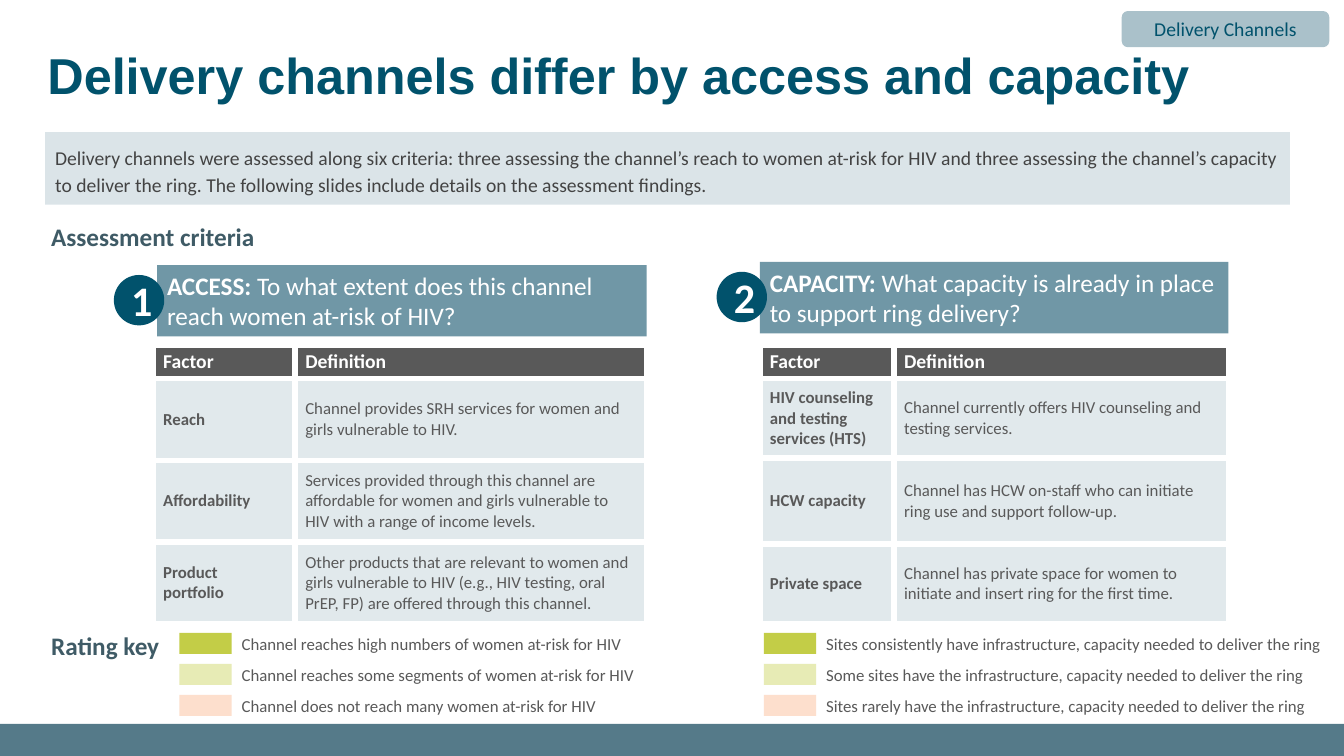
from lxml import etree
from pptx import Presentation
from pptx import util as u
from pptx.dml.color import RGBColor
from pptx.enum import shapes, text
from pptx.oxml.ns import qn

COLORS = {
    "white": "FFFFFF", "navy": "01526C", "footer": "557A89", "banner": "7097A6",
    "heading": "3F5B66", "intro": "DBE4E8", "intro_text": "434343", "tag": "AAC1CA",
    "gray": "595959", "cell": "E1E9EC",
    "high": "C3CD47", "medium": "E7EBB5", "low": "FDDFCD",
}

CRITERIA = [
    {
        "number": "1", "name": "ACCESS: ",
        "question": "To what extent does this channel reach women at-risk of HIV?",
        "banner": (3.96, 6.68, 12.34, 1.8),
        "table_left": 3.86, "columns": (3.58, 8.86), "rows": (0.81, 2.06, 2.06, 2.06),
        "factors": [
            ("Reach", "Channel provides SRH services for women and girls vulnerable to HIV."),
            ("Affordability", "Services provided through this channel are affordable for women "
                              "and girls vulnerable to HIV with a range of income levels."),
            ("Product\vportfolio", "Other products that are relevant to women and girls vulnerable "
                                   "to HIV (e.g., HIV testing, oral PrEP, FP) are offered through "
                                   "this channel."),
        ],
        "key_left": 4.52,
        "ratings": [
            "Channel reaches high numbers of women at-risk for HIV",
            "Channel reaches some segments of women at-risk for HIV",
            "Channel does not reach many women at-risk for HIV",
        ],
    },
    {
        "number": "2", "name": "CAPACITY: ",
        "question": "What capacity is already in place to support ring delivery?",
        "banner": (19.15, 6.6, 11.81, 1.8),
        "table_left": 19.15, "columns": (3.38, 8.43), "rows": (0.81, 2.01, 2.16, 2.01),
        "factors": [
            ("HIV counseling and testing services (HTS)",
             "Channel currently offers HIV counseling and testing services."),
            ("HCW capacity",
             "Channel has HCW on-staff who can initiate ring use and support follow-up."),
            ("Private space",
             "Channel has private space for women to initiate and insert ring for the first time."),
        ],
        "key_left": 19.25,
        "ratings": [
            "Sites consistently have infrastructure, capacity needed to deliver the ring",
            "Some sites have the infrastructure, capacity needed to deliver the ring",
            "Sites rarely have the infrastructure, capacity needed to deliver the ring",
        ],
    },
]


def rgb(color):
    return RGBColor.from_string(COLORS[color])


def style(paragraph, size, color, bold=False, face="Calibri", align=text.PP_ALIGN.LEFT):
    paragraph.alignment = align
    font = paragraph.font
    font.name, font.size, font.bold = face, u.Pt(size), bold
    font.color.rgb = rgb(color)


def add_block(slide, box, fill, kind=shapes.MSO_SHAPE.RECTANGLE):
    block = slide.shapes.add_shape(kind, *map(u.Cm, box))
    block.shadow.inherit = False
    block.fill.solid()
    block.fill.fore_color.rgb = rgb(fill)
    block.line.fill.background()
    return block


def add_label(slide, box, words, size, color, bold=False, wrap=True):
    frame = slide.shapes.add_textbox(*map(u.Cm, box)).text_frame
    frame.word_wrap = wrap
    frame.text = words
    style(frame.paragraphs[0], size, color, bold)


def add_title(slide, words):
    title = slide.shapes.title
    title.left, title.top, title.width, title.height = map(u.Cm, (0.94, 0.58, 31.65, 2.21))
    frame = title.text_frame
    frame.text = words
    frame.auto_size = text.MSO_AUTO_SIZE.NONE
    frame.vertical_anchor = text.MSO_ANCHOR.BOTTOM
    frame.paragraphs[0].line_spacing = 0.9
    style(frame.paragraphs[0], 36, "navy", True, "Arial")


def add_intro(slide, words):
    frame = add_block(slide, (1.14, 3.33, 31.37, 1.83), "intro").text_frame
    frame.margin_top = frame.margin_bottom = u.Cm(0.25)
    frame.vertical_anchor = text.MSO_ANCHOR.TOP
    frame.text = words
    frame.paragraphs[0].line_spacing = 1.15
    style(frame.paragraphs[0], 14, "intro_text")


def add_tag(slide, words):
    tag = add_block(slide, (28.27, 0.28, 5.23, 0.91), "tag", shapes.MSO_SHAPE.ROUNDED_RECTANGLE)
    tag.text_frame.text = words
    style(tag.text_frame.paragraphs[0], 14, "navy", align=text.PP_ALIGN.CENTER)


def add_banner(slide, criterion):
    left, top, width, height = criterion["banner"]
    frame = add_block(slide, (left, top, width, height), "banner").text_frame
    frame.vertical_anchor = text.MSO_ANCHOR.TOP
    paragraph = frame.paragraphs[0]
    style(paragraph, 18, "white")
    name = paragraph.add_run()
    name.text = criterion["name"]
    name.font.bold = True
    paragraph.add_run().text = criterion["question"]

    badge = add_block(slide, (left - 1.09, top + 0.25, 1.27, 1.27), "navy", shapes.MSO_SHAPE.OVAL)
    badge.text_frame.text = criterion["number"]
    style(badge.text_frame.paragraphs[0], 30, "white", True, align=text.PP_ALIGN.CENTER)


def add_borders(cell):
    properties = cell._tc.get_or_add_tcPr()
    for side in ("a:lnL", "a:lnR", "a:lnT", "a:lnB"):
        border = etree.SubElement(properties, qn(side), w=str(u.Pt(4.5)))
        fill = etree.SubElement(border, qn("a:solidFill"))
        etree.SubElement(fill, qn("a:srgbClr"), val=COLORS["white"])


def fill_cell(cell, words, size, color, bold, fill):
    add_borders(cell)
    cell.fill.solid()
    cell.fill.fore_color.rgb = rgb(fill)
    cell.vertical_anchor = text.MSO_ANCHOR.MIDDLE
    cell.text_frame.text = words
    style(cell.text_frame.paragraphs[0], size, color, bold)


def add_factors(slide, criterion):
    columns, rows = criterion["columns"], criterion["rows"]
    box = (criterion["table_left"], 8.69, sum(columns), sum(rows))
    table = slide.shapes.add_table(len(rows), len(columns), *map(u.Cm, box)).table
    table.horz_banding = False
    for column, width in zip(table.columns, columns):
        column.width = u.Cm(width)
    for row, height in zip(table.rows, rows):
        row.height = u.Cm(height)
    for c, heading in enumerate(("Factor", "Definition")):
        fill_cell(table.cell(0, c), heading, 14, "white", True, "gray")
    for r, factor in enumerate(criterion["factors"], 1):
        for c, words in enumerate(factor):
            fill_cell(table.cell(r, c), words, 12, "gray", c == 0, "cell")


def add_rating_key(slide, criterion):
    left = criterion["key_left"]
    for i, (level, meaning) in enumerate(zip(("high", "medium", "low"), criterion["ratings"])):
        top = 15.95 + i * 0.78
        add_block(slide, (left, top, 1.32, 0.53), level)
        add_label(slide, (left + 1.32, top - 0.1, 13, 0.76), meaning, 12, "gray", wrap=False)


def main():
    deck = Presentation()
    deck.slide_width, deck.slide_height = u.Cm(33.87), u.Cm(19.05)
    slide = deck.slides.add_slide(deck.slide_layouts[5])
    add_block(slide, (0, 18.24, 33.87, 0.81), "footer")
    add_title(slide, "Delivery channels differ by access and capacity")
    add_tag(slide, "Delivery Channels")
    add_intro(slide, "Delivery channels were assessed along six criteria: three assessing the "
                     "channel’s reach to women at-risk for HIV and three assessing the channel’s "
                     "capacity to deliver the ring. The following slides include details on the "
                     "assessment findings.")
    add_label(slide, (1.04, 5.46, 11.53, 0.86), "Assessment criteria", 18, "heading", True)
    add_label(slide, (1.04, 15.77, 3.86, 0.94), "Rating key", 18, "heading", True)
    for criterion in CRITERIA:
        add_banner(slide, criterion)
        add_factors(slide, criterion)
        add_rating_key(slide, criterion)
    deck.save("out.pptx")


if __name__ == "__main__":
    main()
